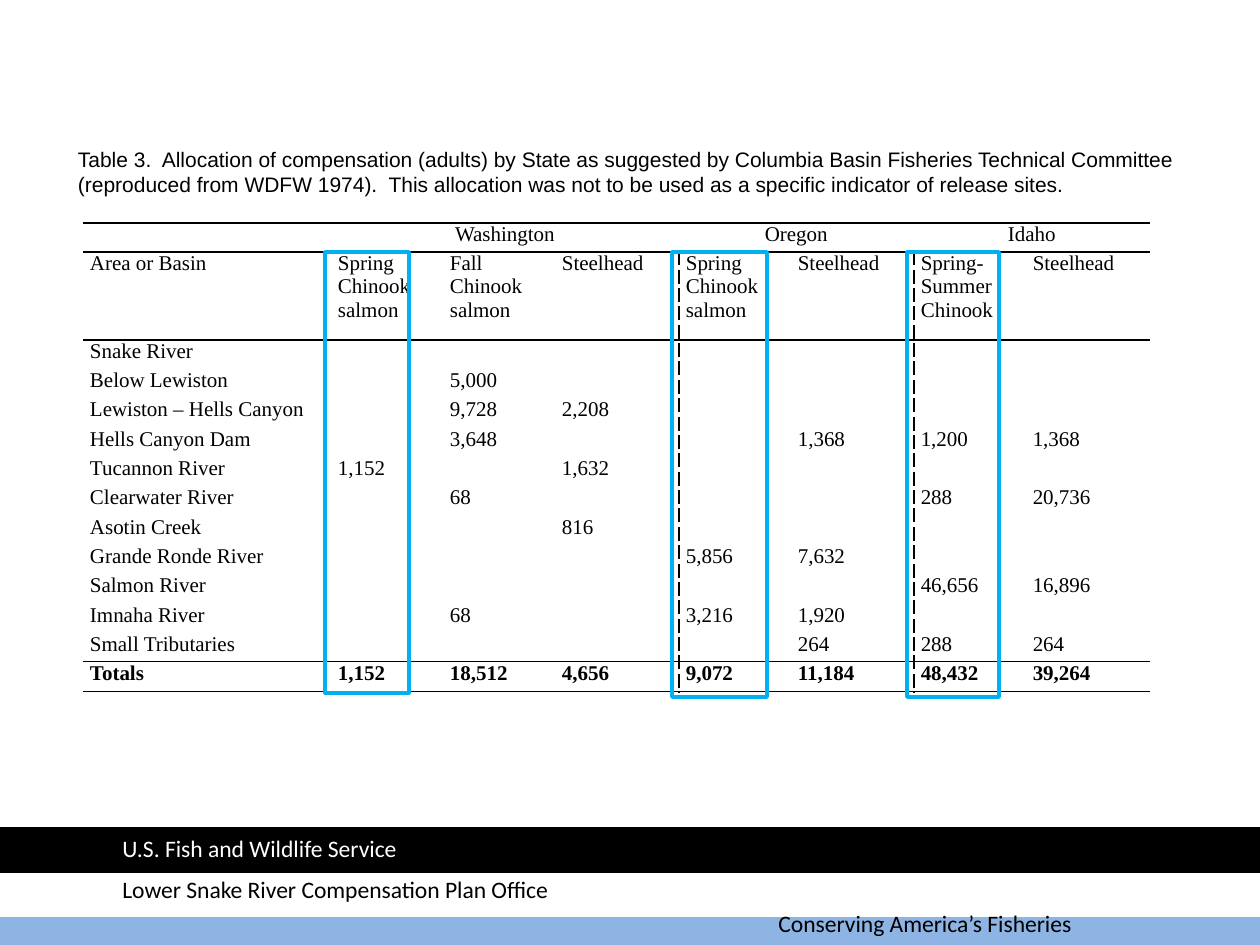
import dataclasses

import lxml.etree
import pptx
import pptx.dml.color
import pptx.enum.shapes
import pptx.enum.text
import pptx.oxml.ns
import pptx.util

EMU_PER_PX = 914400 / 126


def px(length):
    return pptx.util.Emu(round(length * EMU_PER_PX))


def rgb(code):
    return pptx.dml.color.RGBColor.from_string(code)


def add_xml(parent, tag, **attributes):
    return lxml.etree.SubElement(parent, pptx.oxml.ns.qn(tag), **attributes)


@dataclasses.dataclass(frozen=True)
class Theme:
    black: str = "000000"
    white: str = "FFFFFF"
    river_blue: str = "8EB4E3"
    highlight: str = "00B0F0"
    caption_font: str = "Arial"
    footer_font: str = "Calibri"
    table_font: str = "Times New Roman"
    body_size: float = 12
    footer_size: float = 13.5
    rule_width: float = 1
    frame_width: float = 2


class SlideBuilder:
    def __init__(self, slide, theme):
        self.slide = slide
        self.theme = theme

    def style(self, paragraph, font_name, size, color, bold=False):
        paragraph.font.name = font_name
        paragraph.font.size = pptx.util.Pt(size)
        paragraph.font.color.rgb = rgb(color)
        paragraph.font.bold = bold

    def caption(self, text, left, top, width, height):
        title = self.slide.shapes.title
        title.left, title.top, title.width, title.height = map(px, (left, top, width, height))
        frame = title.text_frame
        frame.text = text
        frame.word_wrap = True
        frame.auto_size = pptx.enum.text.MSO_AUTO_SIZE.NONE
        frame.vertical_anchor = pptx.enum.text.MSO_ANCHOR.MIDDLE
        frame.margin_left = frame.margin_right = px(9)
        frame.margin_top = frame.margin_bottom = px(5)
        frame.paragraphs[0].alignment = pptx.enum.text.PP_ALIGN.LEFT
        self.style(frame.paragraphs[0], self.theme.caption_font,
                   self.theme.body_size, self.theme.black)

    def rectangle(self, left, top, width, height, line, fill=None):
        shape = self.slide.shapes.add_shape(
            pptx.enum.shapes.MSO_SHAPE.RECTANGLE, *map(px, (left, top, width, height)))
        shape.shadow.inherit = False
        if fill:
            shape.fill.solid()
            shape.fill.fore_color.rgb = rgb(fill)
        else:
            shape.fill.background()
        shape.line.color.rgb = rgb(line)
        shape.line.width = pptx.util.Pt(self.theme.frame_width)

    def footer(self, text, left, top, width, color):
        box = self.slide.shapes.add_textbox(*map(px, (left, top, width, 42)))
        box.text_frame.word_wrap = True
        box.text_frame.text = text
        self.style(box.text_frame.paragraphs[0], self.theme.footer_font,
                   self.theme.footer_size, color)

    def border(self, cell, side, dash):
        line = add_xml(cell._tc.get_or_add_tcPr(), f"a:ln{side}",
                       w=str(pptx.util.Pt(self.theme.rule_width)))
        if dash is None:
            add_xml(line, "a:noFill")
            return
        add_xml(add_xml(line, "a:solidFill"), "a:srgbClr", val=self.theme.black)
        add_xml(line, "a:prstDash", val=dash)

    def table(self, rows, left, top, widths, heights, spans, rules, dividers):
        table = self.slide.shapes.add_table(
            len(rows), len(widths), *map(px, (left, top, sum(widths), sum(heights)))).table
        table.first_row = table.horz_banding = False
        for column, width in zip(table.columns, widths):
            column.width = px(width)
        for row, height in zip(table.rows, heights):
            row.height = px(height)
        for r, values in enumerate(rows):
            for c, value in enumerate(values):
                cell = table.cell(r, c)
                cell.margin_left = cell.margin_right = px(7)
                cell.margin_top = cell.margin_bottom = 0
                for side, edge in (("L", c), ("R", c + 1)):
                    self.border(cell, side, "dash" if r and edge in dividers else None)
                for side, edge in (("T", r), ("B", r + 1)):
                    self.border(cell, side, "solid" if edge in rules else None)
                cell.fill.background()
                cell.text = value
                paragraph = cell.text_frame.paragraphs[0]
                self.style(paragraph, self.theme.table_font, self.theme.body_size,
                           self.theme.black, bold=r == len(rows) - 1)
                if r == 0:
                    paragraph.alignment = pptx.enum.text.PP_ALIGN.CENTER
                if not value:
                    add_xml(paragraph._p, "a:endParaRPr", sz=str(self.theme.body_size * 100))
        for first, last in spans:
            table.cell(0, first).merge(table.cell(0, last))


ALLOCATION = [
    ["", "Washington", "", "", "Oregon", "", "Idaho", ""],
    ["Area or Basin", "Spring Chinook salmon", "Fall Chinook salmon", "Steelhead",
     "Spring Chinook salmon", "Steelhead", "Spring-Summer Chinook", "Steelhead"],
    ["Snake River", "", "", "", "", "", "", ""],
    ["Below Lewiston", "", "5,000", "", "", "", "", ""],
    ["Lewiston – Hells Canyon", "", "9,728", "2,208", "", "", "", ""],
    ["Hells Canyon Dam", "", "3,648", "", "", "1,368", "1,200", "1,368"],
    ["Tucannon River", "1,152", "", "1,632", "", "", "", ""],
    ["Clearwater River", "", "68", "", "", "", "288", "20,736"],
    ["Asotin Creek", "", "", "816", "", "", "", ""],
    ["Grande Ronde River", "", "", "", "5,856", "7,632", "", ""],
    ["Salmon River", "", "", "", "", "", "46,656", "16,896"],
    ["Imnaha River", "", "68", "", "3,216", "1,920", "", ""],
    ["Small Tributaries", "", "", "", "", "264", "288", "264"],
    ["Totals", "1,152", "18,512", "4,656", "9,072", "11,184", "48,432", "39,264"],
]


def main():
    presentation = pptx.Presentation()
    presentation.slide_width = px(1260)
    presentation.slide_height = px(945)
    theme = Theme()
    slide = presentation.slides.add_slide(presentation.slide_layouts[5])
    builder = SlideBuilder(slide, theme)

    for left, top, color in ((-1, 903, theme.river_blue), (0, 873, theme.white),
                             (0, 829, theme.black)):
        builder.rectangle(left, top, 1260, 42, line=color, fill=color)
    builder.footer("Conserving America’s Fisheries", 766, 903, 462, theme.black)
    builder.footer("U.S. Fish and Wildlife Service", 110, 828, 524, theme.white)
    builder.footer("Lower Snake River Compensation Plan Office", 110, 869, 626, theme.black)

    builder.caption(
        "Table 3.  Allocation of compensation (adults) by State as suggested by Columbia Basin "
        "Fisheries Technical Committee (reproduced from WDFW 1974).  This allocation was not to "
        "be used as a specific indicator of release sites.", 69, 141, 1119, 61)
    builder.table(
        ALLOCATION, 83, 223,
        widths=[248, 112, 112, 124, 112, 123, 112, 124],
        heights=[29, 88] + [29, 29, 30] * 4,
        spans=[(1, 3), (4, 5), (6, 7)],
        rules={0, 1, 2, 13, 14}, dividers={4, 6})
    for left, width, height in ((325, 84, 441), (672, 95, 445), (907, 92, 445)):
        builder.rectangle(left, 252, width, height, line=theme.highlight)

    presentation.save("out.pptx")


if __name__ == "__main__":
    main()
